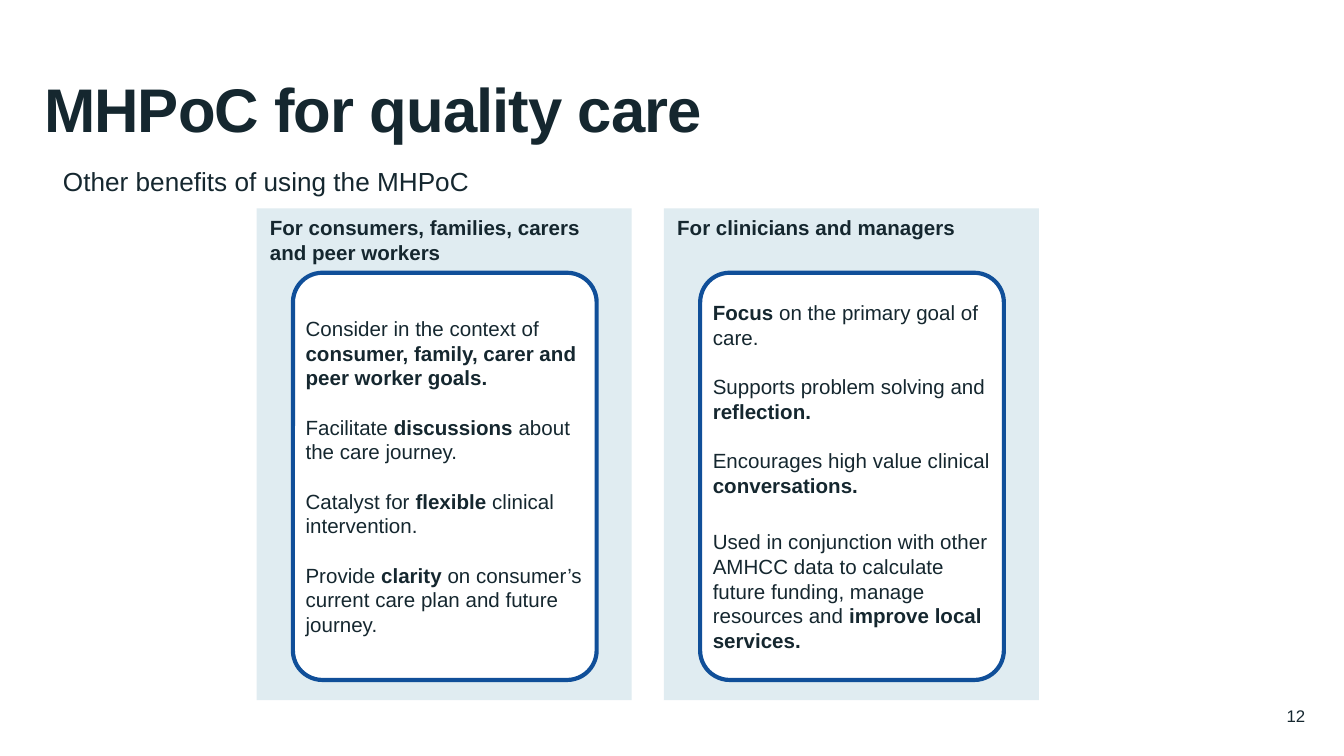
import pptx
import pptx.util
import pptx.dml.color
import pptx.enum.shapes
import pptx.enum.text

Inches, Pt = pptx.util.Inches, pptx.util.Pt
SHAPES = pptx.enum.shapes.MSO_SHAPE
ALIGN = pptx.enum.text.PP_ALIGN
ANCHOR = pptx.enum.text.MSO_ANCHOR

# Content: a paragraph is (space before in points, [(text, bold), ...])
TITLE = "MHPoC for quality care"
SUBTITLE = "Other benefits of using the MHPoC"
PAGE_NUMBER = "12"
PANELS = [
    ("For consumers, families, carers and peer workers", [
        (0, [("Consider in the context of ", False),
             ("consumer, family, carer and peer worker goals.", True)]),
        (13.2, [("Facilitate ", False), ("discussions", True),
                (" about the care journey.", False)]),
        (13.2, [("Catalyst for ", False), ("flexible", True),
                (" clinical intervention.", False)]),
        (13.2, [("Provide ", False), ("clarity", True),
                (" on consumer’s current care plan and future journey.", False)]),
    ]),
    ("For clinicians and managers", [
        (0, [("Focus", True), (" on the primary goal of care.", False)]),
        (13.2, [("Supports problem solving and ", False), ("reflection.", True)]),
        (13.2, [("Encourages high value clinical ", False), ("conversations.", True)]),
        (17, [("Used in conjunction with other AMHCC data to calculate future "
               "funding, manage resources and ", False),
              ("improve local services.", True)]),
    ]),
]

# Look and layout
SLIDE_WIDTH = 10
SLIDE_HEIGHT = SLIDE_WIDTH * 9 / 16
INK, PANEL_FILL, CARD_FILL, CARD_LINE = "15272F", "E0ECF1", "FFFFFF", "104F99"
PANEL_LEFT, PANEL_TOP, PANEL_WIDTH, PANEL_HEIGHT = 1.91, 1.55, 2.79, 3.66
PANEL_STEP = 3.03
CARD_WIDTH, CARD_HEIGHT, CARD_RADIUS = 2.26, 3.03, 0.22
CARD_INDENT, CARD_DROP = 0.27, 0.48


def color(value):
    return pptx.dml.color.RGBColor.from_string(value)


def write(shape, paragraphs, size, anchor=ANCHOR.TOP, align=ALIGN.LEFT, margin=0.1):
    frame = shape.text_frame
    settings = {"word_wrap": True, "vertical_anchor": anchor,
                "margin_left": Inches(margin), "margin_right": Inches(margin)}
    for name, value in settings.items():
        setattr(frame, name, value)
    for index, (space, runs) in enumerate(paragraphs):
        paragraph = frame.add_paragraph() if index else frame.paragraphs[0]
        paragraph.alignment = align
        if space:
            paragraph.space_before = Pt(space)
        for text, bold in runs:
            run = paragraph.add_run()
            run.text = text
            for name, value in {"name": "Arial", "size": Pt(size), "bold": bold}.items():
                setattr(run.font, name, value)
            run.font.color.rgb = color(INK)


def add_text(slide, box, text, size, bold=False, **options):
    shape = slide.shapes.add_textbox(*map(Inches, box))
    write(shape, [(0, [(text, bold)])], size, **options)
    return shape


def add_block(slide, kind, box, fill, line=None):
    shape = slide.shapes.add_shape(kind, *map(Inches, box))
    shape.shadow.inherit = False
    shape.fill.solid()
    shape.fill.fore_color.rgb = color(fill)
    if line:
        shape.line.color.rgb = color(line)
        shape.line.width = Pt(2.25)
    else:
        shape.line.fill.background()
    return shape


def main():
    presentation = pptx.Presentation()
    presentation.slide_width = Inches(SLIDE_WIDTH)
    presentation.slide_height = Inches(SLIDE_HEIGHT)
    slide = presentation.slides.add_slide(presentation.slide_layouts[6])

    # Headings, with the title slightly tightened
    title = add_text(slide, (0.23, 0.48, 7.23, 0.66), TITLE, 33, bold=True)
    title.text_frame.paragraphs[0].runs[0].font._element.set("spc", "-50")
    add_text(slide, (0.37, 1.18, 9.25, 0.34), SUBTITLE, 14)

    # Panels, each with a rounded card
    for index, (heading, benefits) in enumerate(PANELS):
        left = PANEL_LEFT + index * PANEL_STEP
        panel = add_block(slide, SHAPES.RECTANGLE,
                          (left, PANEL_TOP, PANEL_WIDTH, PANEL_HEIGHT), PANEL_FILL)
        write(panel, [(0, [(heading, True)])], 11)
        card = add_block(slide, SHAPES.ROUNDED_RECTANGLE,
                         (left + CARD_INDENT, PANEL_TOP + CARD_DROP,
                          CARD_WIDTH, CARD_HEIGHT), CARD_FILL, CARD_LINE)
        card.adjustments[0] = CARD_RADIUS / CARD_WIDTH
        write(card, benefits, 11, anchor=ANCHOR.MIDDLE, margin=0.03)

    # Page number
    add_text(slide, (9.21, 5.18, 0.6, 0.3), PAGE_NUMBER, 9,
             anchor=ANCHOR.MIDDLE, align=ALIGN.RIGHT)

    presentation.save("out.pptx")


if __name__ == "__main__":
    main()
